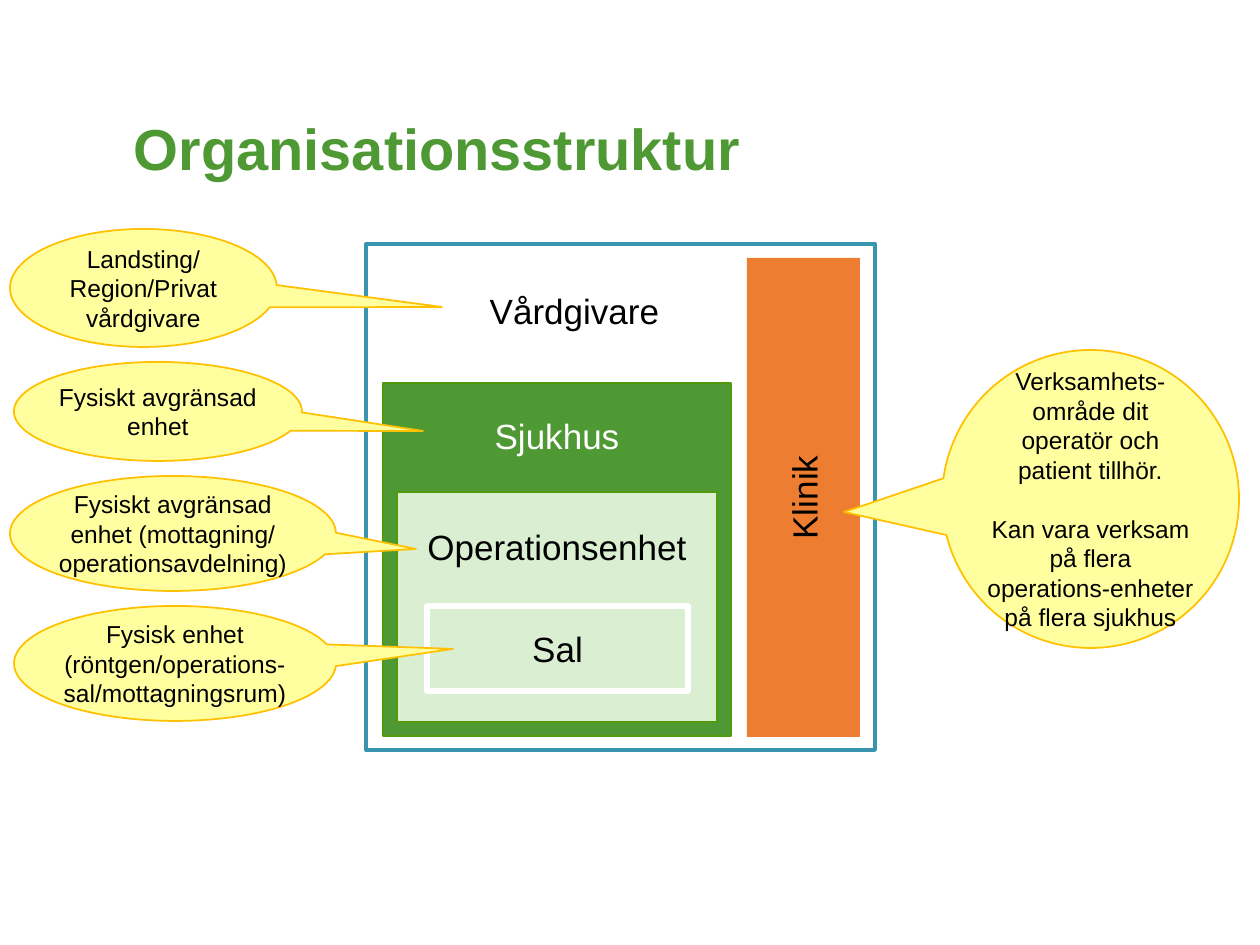
import pptx
import pptx.dml.color
import pptx.enum.shapes
import pptx.enum.text
import pptx.util

COLORS = {
    "green": "4F9935", "green_line": "52990B", "pale_green": "DAEFD2",
    "blue": "3994AE", "orange": "ED7D31", "yellow": "FFFF9F",
    "amber": "FFC000", "white": "FFFFFF", "black": "000000",
}
PX = 914400 / 126
SHAPES = pptx.enum.shapes.MSO_SHAPE
ANCHOR = pptx.enum.text.MSO_ANCHOR
ALIGN = pptx.enum.text.PP_ALIGN


def emu(px):
    return pptx.util.Emu(round(px * PX))


def color(name):
    return pptx.dml.color.RGBColor.from_string(COLORS[name])


class Deck:
    font = "Arial"
    label_size = 20
    note_size = 14

    def __init__(self, slide):
        self.slide = slide

    def set_text(self, frame, paragraphs, size, ink, align, bold=False):
        frame.word_wrap = True
        frame.text = "\n".join(paragraphs)
        for paragraph in frame.paragraphs:
            paragraph.alignment = align
            for run in paragraph.runs:
                run.font.name = self.font
                run.font.size = pptx.util.Pt(size)
                run.font.bold = bold
                run.font.color.rgb = color(ink)

    def inset(self, frame, left=0, top=0, right=0, bottom=0):
        frame.margin_left, frame.margin_top = emu(left), emu(top)
        frame.margin_right, frame.margin_bottom = emu(right), emu(bottom)

    def title(self, text, box):
        heading = self.slide.shapes.title
        heading.left, heading.top, heading.width, heading.height = map(emu, box)
        frame = heading.text_frame
        frame.auto_size = pptx.enum.text.MSO_AUTO_SIZE.NONE
        frame.vertical_anchor = ANCHOR.BOTTOM
        self.inset(frame)
        self.set_text(frame, [text], 33, "green", ALIGN.LEFT, bold=True)

    def shape(self, preset, box, fill, line=None, line_width=1):
        shape = self.slide.shapes.add_shape(preset, *map(emu, box))
        shape.shadow.inherit = False
        shape.fill.solid()
        shape.fill.fore_color.rgb = color(fill)
        if line:
            shape.line.color.rgb = color(line)
            shape.line.width = pptx.util.Pt(line_width)
        else:
            shape.line.fill.background()
        shape.text_frame.vertical_anchor = ANCHOR.MIDDLE
        return shape

    def unit(self, text, box, fill, line=None, line_width=1, ink="black",
             top=None, right=0, vertical=False):
        """A rectangle; top places its label below the upper edge."""
        frame = self.shape(SHAPES.RECTANGLE, box, fill, line, line_width).text_frame
        self.inset(frame, top=top or 0, right=right)
        if top is not None:
            frame.vertical_anchor = ANCHOR.TOP
        if vertical:
            frame._txBody.bodyPr.set("vert", "vert270")
        self.set_text(frame, [text], self.label_size, ink, ALIGN.CENTER)

    def callout(self, paragraphs, box, tip, side=0, gap=0):
        """An oval bubble whose pointer ends at tip."""
        bubble = self.shape(SHAPES.OVAL_CALLOUT, box, "yellow", "amber")
        left, top, width, height = box
        bubble.adjustments[0] = (tip[0] - left) / width - 0.5
        bubble.adjustments[1] = (tip[1] - top) / height - 0.5
        frame = bubble.text_frame
        self.inset(frame, left=side, right=side)
        self.set_text(frame, paragraphs, self.note_size, "black", ALIGN.CENTER)
        for paragraph in frame.paragraphs[1:]:
            paragraph.space_before = pptx.util.Pt(gap)


def main():
    presentation = pptx.Presentation()
    presentation.slide_width = emu(1260)
    presentation.slide_height = emu(945)
    deck = Deck(presentation.slides.add_slide(presentation.slide_layouts[5]))

    deck.title("Organisationsstruktur", (134, 64, 994, 118))

    # Nested organisation levels, outermost first
    deck.unit("Vårdgivare", (366, 244, 509, 506), "white", "blue", 2.25,
              top=46, right=92)
    deck.unit("Sjukhus", (383, 383, 348, 353), "green", "green_line",
              ink="white", top=32)
    deck.unit("Operationsenhet", (397, 492, 320, 230), "pale_green",
              "green_line", top=34)
    deck.unit("Sal", (427, 606, 261, 85), "pale_green", "white", 3)
    deck.unit("Klinik", (747, 258, 113, 479), "orange", vertical=True)

    # Explanations pointing at each level
    deck.callout(["Landsting/ Region/Privat vårdgivare"],
                 (10, 229, 267, 118), (442, 307), side=13)
    deck.callout(["Fysiskt avgränsad enhet"], (14, 362, 288, 99), (423, 431))
    deck.callout(["Fysiskt avgränsad enhet (mottagning/", "operationsavdelning)"],
                 (10, 476, 326, 115), (416, 549))
    deck.callout(["Fysisk enhet (röntgen/operations-sal/mottagningsrum)"],
                 (14, 606, 322, 115), (453, 649))
    deck.callout(["Verksamhets-\vområde dit operatör och patient tillhör.",
                  "Kan vara verksam på flera operations-enheter på flera sjukhus"],
                 (942, 350, 297, 298), (844, 512), gap=17)

    presentation.save("out.pptx")


if __name__ == "__main__":
    main()
